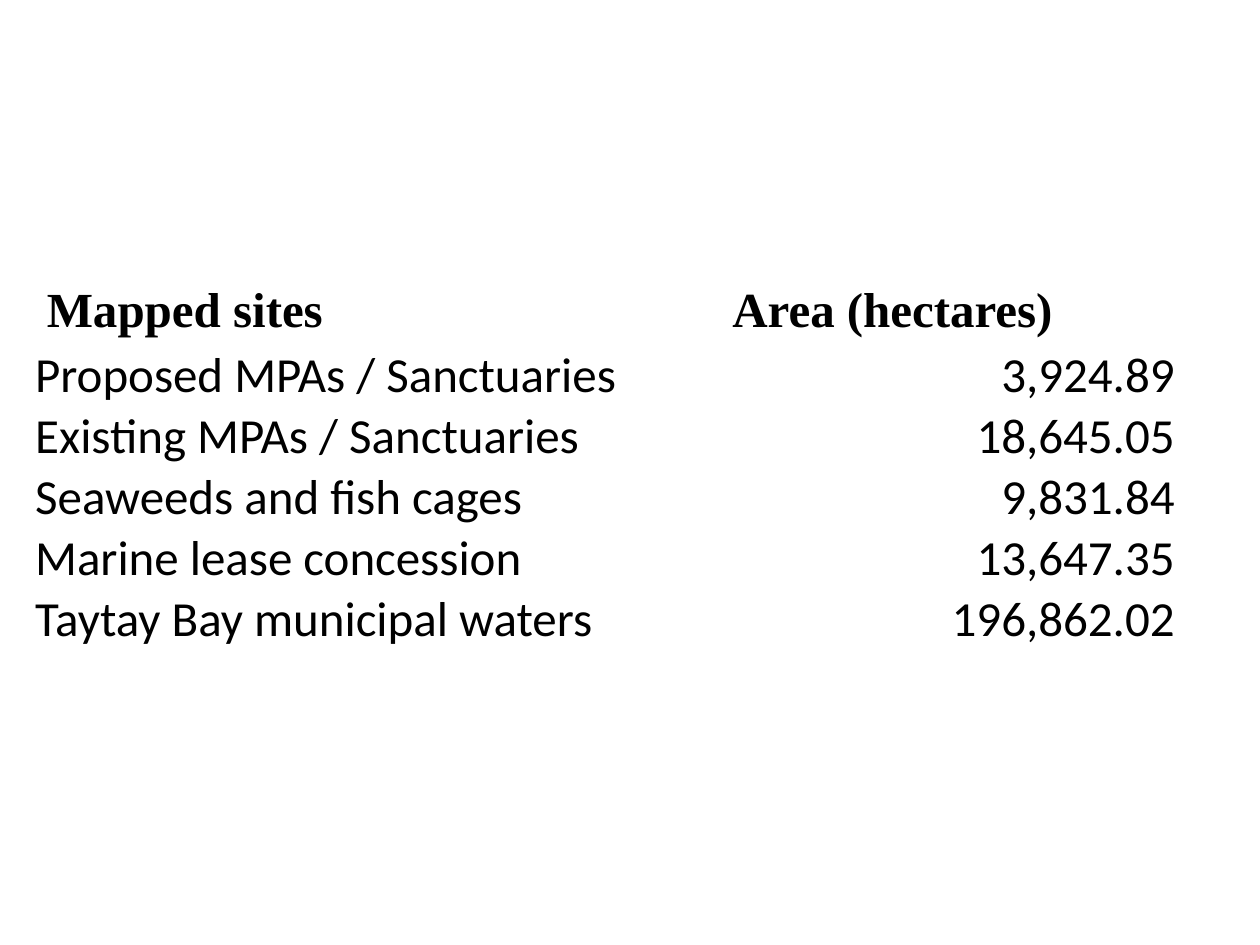
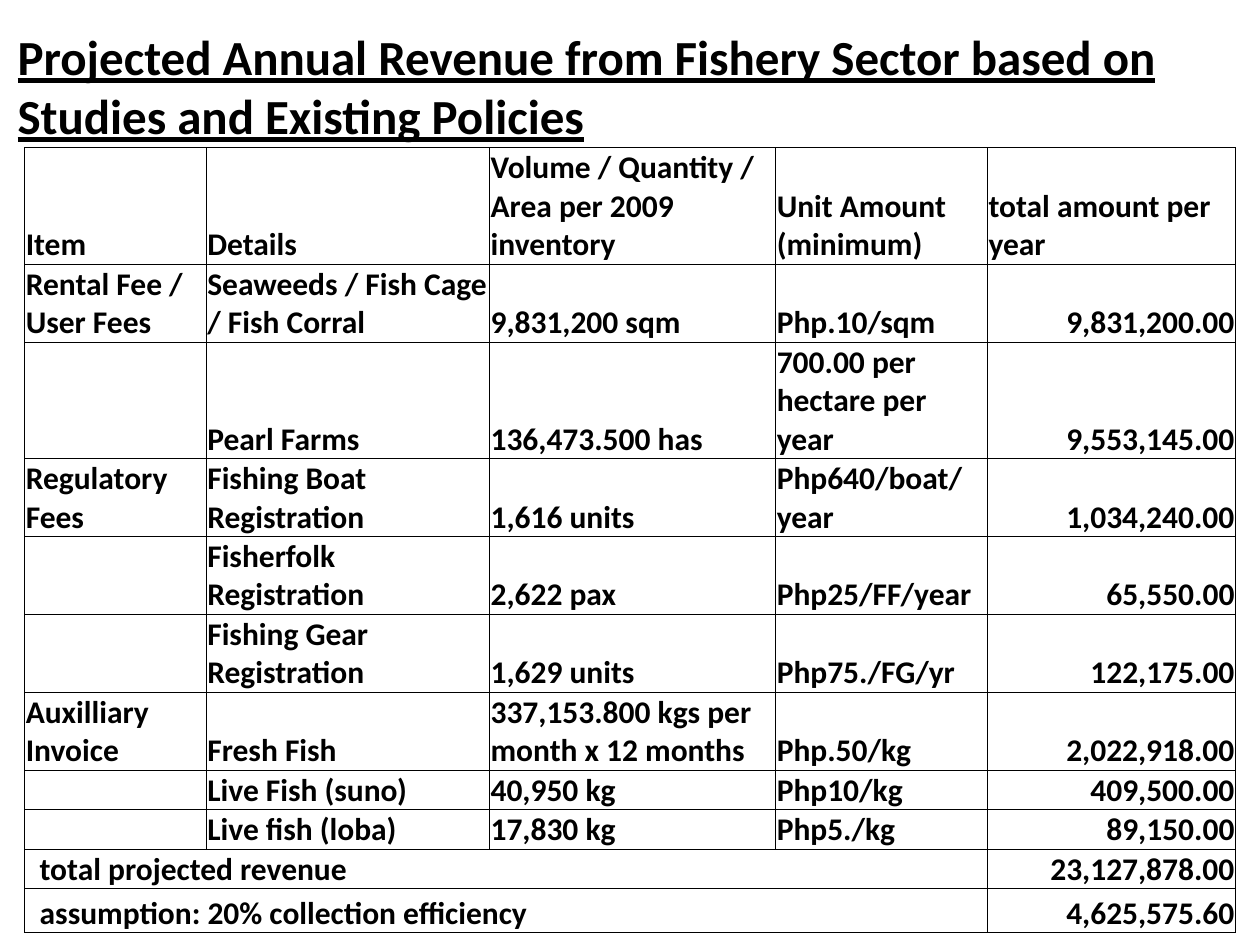
from dataclasses import dataclass
from lxml.etree import SubElement
from pptx import Presentation
from pptx.dml.color import RGBColor
from pptx.enum.text import MSO_ANCHOR as Anchor, PP_ALIGN as Align
from pptx.oxml.ns import qn
from pptx.util import Cm, Pt


@dataclass(frozen=True)
class Theme:
    ink: str = "000000"
    paper: str = "FFFFFF"
    body_font: str = "Calibri"
    heading_font: str = "Times New Roman"
    large: int = 28
    small: int = 18
    hairline: float = 0.5
    thin: float = 1
    thick: float = 3
    tight: float = 0.02
    indent: float = 0.3


THEME = Theme()

SITE_HEADINGS = ("Mapped sites", "Area (hectares)")
SITES = [
    ("Proposed MPAs / Sanctuaries", "3,924.89"),
    ("Existing MPAs / Sanctuaries", "18,645.05"),
    ("Seaweeds and fish cages", "9,831.84"),
    ("Marine lease concession", "13,647.35"),
    ("Taytay Bay municipal waters", "196,862.02"),
]
SITE_WIDTHS = (13.82, 9.19)
SITE_HEADING_HEIGHT, SITE_HEIGHT = 1.35, 1.23

REVENUE_TITLE = ("Projected Annual Revenue from Fishery Sector based on "
                 "Studies and Existing Policies")
REVENUE_HEADINGS = ("Item", "Details", "Volume / Quantity / Area per 2009 inventory",
                    "Unit Amount (minimum)", "total amount per year")
FEES = [
    ("Rental Fee / User Fees", "Seaweeds / Fish Cage / Fish Corral",
     "9,831,200 sqm", "Php.10/sqm", "9,831,200.00"),
    ("", "Pearl Farms", "136,473.500 has", "700.00 per hectare per year", "9,553,145.00"),
    ("Regulatory Fees", "Fishing Boat Registration",
     "1,616 units", "Php640/boat/ year", "1,034,240.00"),
    ("", "Fisherfolk Registration", "2,622 pax", "Php25/FF/year", "65,550.00"),
    ("", "Fishing Gear Registration", "1,629 units", "Php75./FG/yr", "122,175.00"),
    ("Auxilliary Invoice", "Fresh Fish",
     "337,153.800 kgs per month x 12 months", "Php.50/kg", "2,022,918.00"),
    ("", "Live Fish (suno)", "40,950 kg", "Php10/kg", "409,500.00"),
    ("", "Live fish (loba)", "17,830 kg", "Php5./kg", "89,150.00"),
]
TOTALS = [
    ("total projected revenue", "23,127,878.00"),
    ("assumption: 20% collection efficiency", "4,625,575.60"),
]
REVENUE_WIDTHS = (3.66, 5.71, 5.77, 4.27, 5.0)
REVENUE_LINES = (3, 2, 3, 2, 2, 2, 2, 1, 1, 1, 1.14)
LINE_HEIGHT = 0.78


def write(paragraph, text, size, font=THEME.body_font, bold=False, underline=None):
    run = paragraph.add_run()
    run.text = text
    run.font.size = Pt(size)
    run.font.name = font
    run.font.bold = bold
    run.font.underline = underline
    run.font.color.rgb = RGBColor.from_string(THEME.ink)


def draw_borders(cell, color, width, bottom=None):
    properties = cell._tc.get_or_add_tcPr()
    for place, side in enumerate(("lnL", "lnR", "lnT", "lnB")):
        weight = bottom if bottom and side == "lnB" else width
        line = SubElement(properties, qn(f"a:{side}"), w=str(Pt(weight)))
        fill = SubElement(line, qn("a:solidFill"))
        SubElement(fill, qn("a:srgbClr"), val=color)
        properties.insert(place, line)


def add_grid(slide, left, top, widths, heights, color, line_width):
    frame = slide.shapes.add_table(len(heights), len(widths), Cm(left), Cm(top),
                                   Cm(sum(widths)), Cm(sum(heights)))
    grid = frame.table
    grid.first_row = grid.horz_banding = False
    for column, width in zip(grid.columns, widths):
        column.width = Cm(width)
    for row, height in zip(grid.rows, heights):
        row.height = Cm(height)
        for cell in row.cells:
            cell.fill.background()
            draw_borders(cell, color, line_width)
    return grid


def fill_cell(cell, text, size, align=Align.LEFT, bold=False, indent=THEME.tight):
    cell.vertical_anchor = Anchor.BOTTOM
    cell.margin_left = Cm(indent)
    cell.margin_right = cell.margin_top = Cm(THEME.tight)
    cell.margin_bottom = 0
    paragraph = cell.text_frame.paragraphs[0]
    paragraph.alignment = align
    if text:
        write(paragraph, text, size, bold=bold)


def build_sites(deck):
    slide = deck.slides.add_slide(deck.slide_layouts[6])
    heights = [SITE_HEADING_HEIGHT] + [SITE_HEIGHT] * len(SITES)
    grid = add_grid(slide, 0.69, 5.59, SITE_WIDTHS, heights, THEME.paper, THEME.thin)
    for column, heading in enumerate(SITE_HEADINGS):
        cell = grid.cell(0, column)
        for line in cell._tc.tcPr.findall(qn("a:lnB")):
            line.set("w", str(Pt(THEME.thick)))
        write(cell.text_frame.paragraphs[0], heading, THEME.large,
              THEME.heading_font, bold=True)
    for row, (site, area) in enumerate(SITES, 1):
        fill_cell(grid.cell(row, 0), site, THEME.large)
        fill_cell(grid.cell(row, 1), area, THEME.large, Align.RIGHT)


def build_revenue(deck):
    slide = deck.slides.add_slide(deck.slide_layouts[5])
    title = slide.shapes.title
    title.left, title.top, title.width, title.height = map(Cm, (0.1, 0.13, 25.3, 3.18))
    title.text_frame.vertical_anchor = Anchor.MIDDLE
    heading = title.text_frame.paragraphs[0]
    heading.alignment = Align.LEFT
    write(heading, REVENUE_TITLE, THEME.large, bold=True, underline=True)

    heights = [lines * LINE_HEIGHT for lines in REVENUE_LINES]
    grid = add_grid(slide, 0.5, 2.98, REVENUE_WIDTHS, heights, THEME.ink, THEME.hairline)
    last = len(REVENUE_WIDTHS) - 1
    for row, values in enumerate([REVENUE_HEADINGS] + FEES):
        for column, value in enumerate(values):
            align = Align.RIGHT if row and column == last else Align.LEFT
            fill_cell(grid.cell(row, column), value, THEME.small, align, bold=True)
    for row, (label, amount) in enumerate(TOTALS, len(FEES) + 1):
        grid.cell(row, 0).merge(grid.cell(row, last - 1))
        fill_cell(grid.cell(row, 0), label, THEME.small, bold=True, indent=THEME.indent)
        fill_cell(grid.cell(row, last), amount, THEME.small, Align.RIGHT, bold=True)


def main():
    deck = Presentation()
    deck.slide_width, deck.slide_height = Cm(25.4), Cm(19.05)
    build_sites(deck)
    build_revenue(deck)
    deck.save("out.pptx")


if __name__ == "__main__":
    main()
